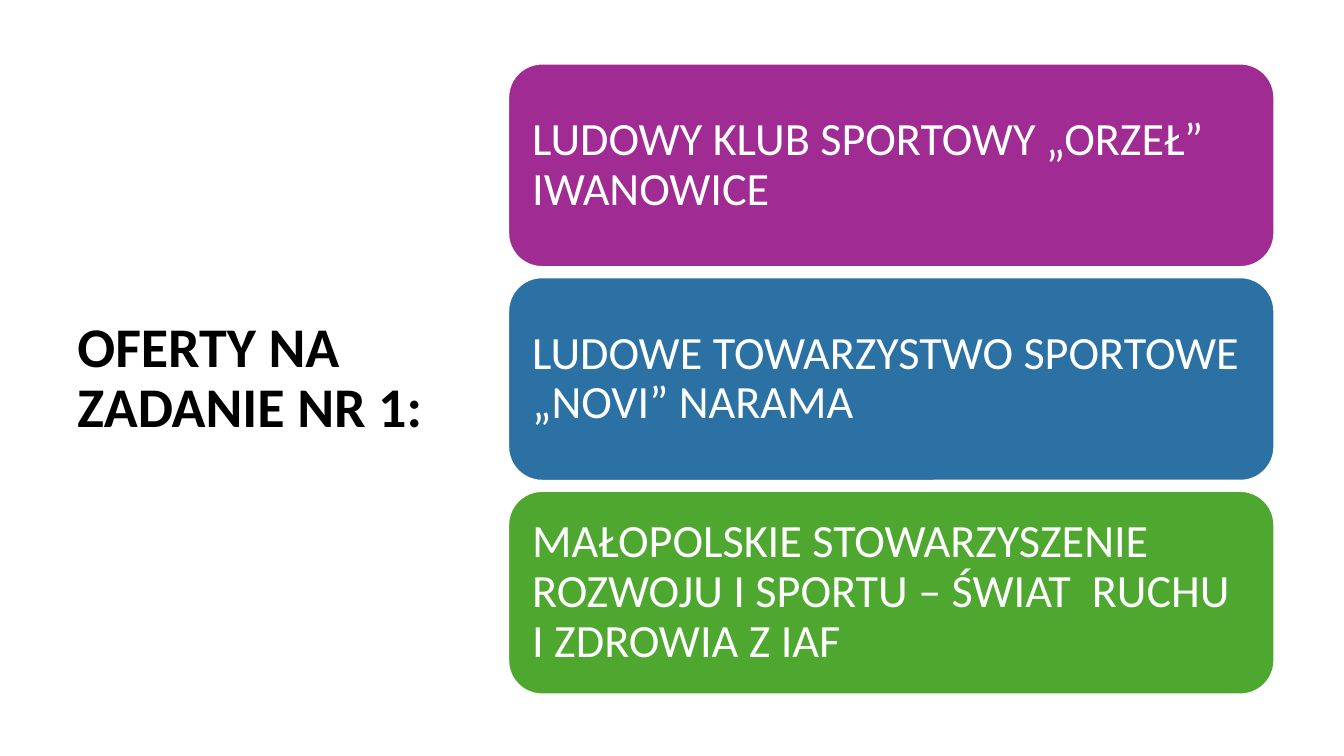
"""Build the slide listing the offers submitted for task no. 1."""
from dataclasses import dataclass

import pptx
import pptx.dml.color
import pptx.enum.shapes
import pptx.enum.text
import pptx.slide
import pptx.text.text
import pptx.util

EMU_PER_PX = 9144


@dataclass(frozen=True)
class Theme:
    font: str = "Calibri"
    title_size: int = 40
    card_size: int = 33
    outline_width: float = 1.5
    line_spacing: float = 0.9
    black: str = "000000"
    white: str = "FFFFFF"
    purple: str = "A02B93"
    blue: str = "2C71A4"
    green: str = "4EA72E"


@dataclass(frozen=True)
class Box:
    left: int
    top: int
    width: int
    height: int

    def emu(self) -> tuple[pptx.util.Emu, ...]:
        return tuple(px(side) for side in (self.left, self.top, self.width, self.height))


@dataclass(frozen=True)
class OfferCard:
    text: str
    fill: str


THEME = Theme()
SLIDE_WIDTH, SLIDE_HEIGHT = 1333, 750
TITLE = "OFERTY NA ZADANIE NR 1:"
TITLE_BOX = Box(67, 60, 382, 633)
FIRST_CARD_BOX = Box(504, 63, 760, 202)
CARD_GAP = 10
TITLE_MARGIN = (10, 5)
CARD_MARGIN = (14, 14)

CARDS = (
    OfferCard("LUDOWY KLUB SPORTOWY „ORZEŁ” IWANOWICE", THEME.purple),
    OfferCard("LUDOWE TOWARZYSTWO SPORTOWE „NOVI” NARAMA", THEME.blue),
    OfferCard("MAŁOPOLSKIE STOWARZYSZENIE ROZWOJU I SPORTU – ŚWIAT  RUCHU I ZDROWIA Z IAF", THEME.green),
)


def px(length: int) -> pptx.util.Emu:
    return pptx.util.Emu(length * EMU_PER_PX)


def rgb(value: str) -> pptx.dml.color.RGBColor:
    return pptx.dml.color.RGBColor.from_string(value)


def write_text(
    frame: pptx.text.text.TextFrame, text: str, size: int, color: str, margin: tuple[int, int], bold: bool = False
) -> None:
    frame.word_wrap = True
    frame.auto_size = pptx.enum.text.MSO_AUTO_SIZE.NONE
    frame.vertical_anchor = pptx.enum.text.MSO_ANCHOR.MIDDLE
    frame.margin_left = frame.margin_right = px(margin[0])
    frame.margin_top = frame.margin_bottom = px(margin[1])
    paragraph = frame.paragraphs[0]
    paragraph.text = text
    paragraph.alignment = pptx.enum.text.PP_ALIGN.LEFT
    paragraph.line_spacing = THEME.line_spacing
    paragraph.font.name = THEME.font
    paragraph.font.size = pptx.util.Pt(size)
    paragraph.font.bold = bold
    paragraph.font.color.rgb = rgb(color)


def draw_title(slide: pptx.slide.Slide) -> None:
    shape = slide.shapes.add_textbox(*TITLE_BOX.emu())
    write_text(shape.text_frame, TITLE, THEME.title_size, THEME.black, TITLE_MARGIN, bold=True)


def draw_card(slide: pptx.slide.Slide, card: OfferCard, box: Box) -> None:
    shape = slide.shapes.add_shape(pptx.enum.shapes.MSO_SHAPE.ROUNDED_RECTANGLE, *box.emu())
    shape.shadow.inherit = False
    shape.fill.solid()
    shape.fill.fore_color.rgb = rgb(card.fill)
    shape.line.color.rgb = rgb(THEME.white)
    shape.line.width = pptx.util.Pt(THEME.outline_width)
    write_text(shape.text_frame, card.text, THEME.card_size, THEME.white, CARD_MARGIN)


def main() -> None:
    presentation = pptx.Presentation()
    presentation.slide_width = px(SLIDE_WIDTH)
    presentation.slide_height = px(SLIDE_HEIGHT)
    slide = presentation.slides.add_slide(presentation.slide_layouts[6])
    draw_title(slide)
    first = FIRST_CARD_BOX
    for index, card in enumerate(CARDS):
        top = first.top + index * (first.height + CARD_GAP)
        draw_card(slide, card, Box(first.left, top, first.width, first.height))
    presentation.save("out.pptx")


if __name__ == "__main__":
    main()
